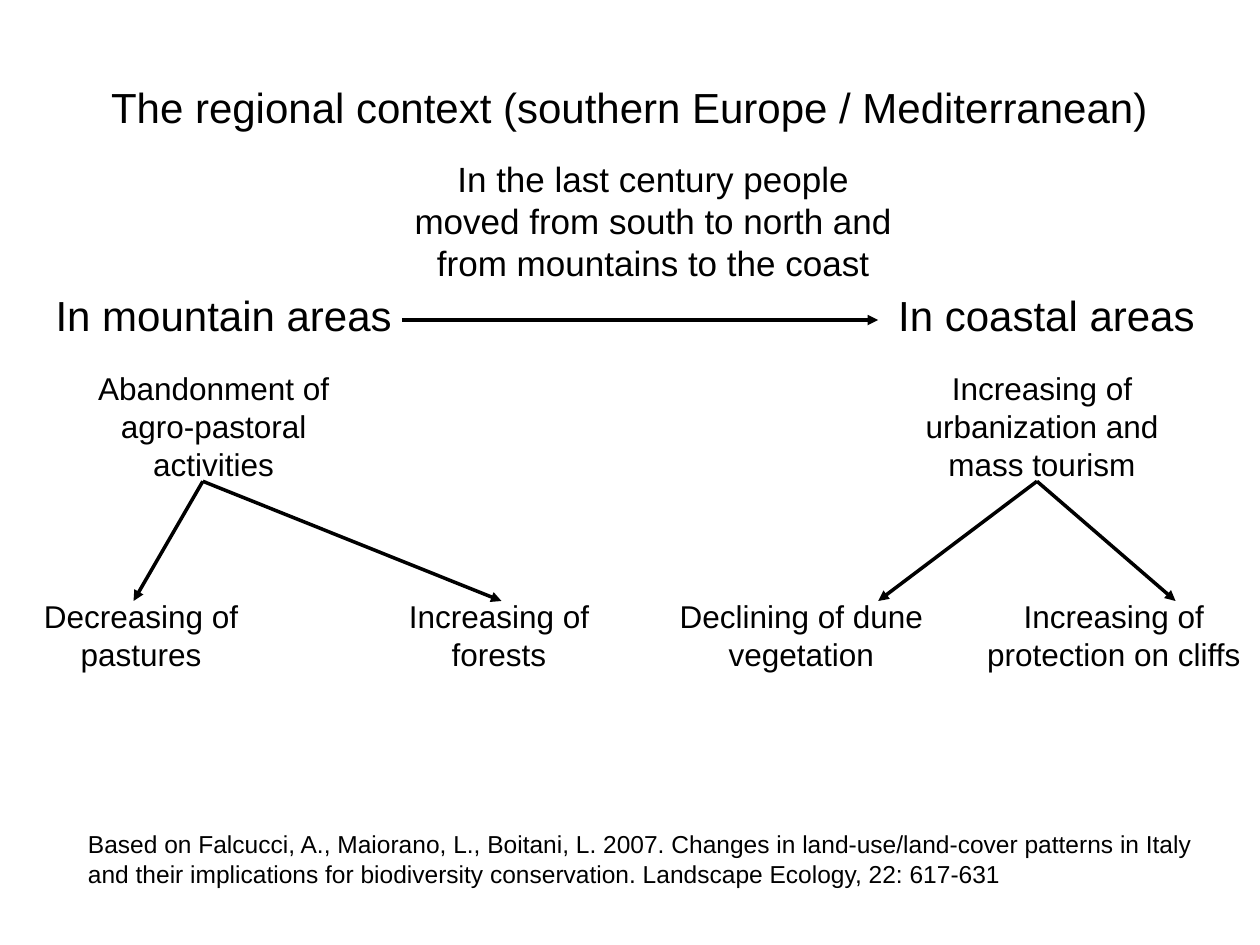
"""Build the slide on land-use change in southern Europe."""
from dataclasses import dataclass

from lxml import etree
from pptx import Presentation
from pptx import util as u
from pptx.dml.color import RGBColor
from pptx.enum import shapes, text
from pptx.oxml.ns import qn

BLACK = RGBColor(0, 0, 0)
FONT = "Arial"
COLUMNS, ROWS = 100, 75
COLUMN, ROW = u.Inches(10) // COLUMNS, u.Inches(7.5) // ROWS
HEADING_ROW, CAUSE_ROW, EFFECT_ROW = 22.5, 28.8, 46.9
FORK_ROW, TIP_ROW = 38.2, 47.7
EFFECT_WIDTH, EFFECT_HEIGHT = 22.4, 7.6


@dataclass(frozen=True)
class Effect:
    """Outcome label with the column its arrow points to."""
    label: str
    left: float
    tip: float


@dataclass(frozen=True)
class Area:
    """Region with its heading, cause and two effects."""
    heading: str
    heading_left: float
    cause: str
    cause_left: float
    cause_width: float
    fork: float
    effects: tuple[Effect, Effect]


AREAS = (
    Area("In mountain areas", 2, "Abandonment of agro-pastoral activities", 6.7, 20.5, 16.1,
         (Effect("Decreasing of pastures", 0, 10.6),
          Effect("Increasing of forests", 28.4, 39.8))),
    Area("In coastal areas", 67.3, "Increasing of urbanization and mass tourism", 69.7, 26, 82.3,
         (Effect("Declining of dune vegetation", 52.4, 69.7),
          Effect("Increasing of protection on cliffs", 77.2, 93.3))),
)


def grid(column: float, row: float) -> tuple[int, int]:
    """Convert grid columns and rows to slide lengths."""
    return round(column * COLUMN), round(row * ROW)


def write(slide, content: str, left: float, top: float, width: float, height: float, *,
          size: int = 18, align=text.PP_ALIGN.CENTER, anchor=text.MSO_ANCHOR.TOP,
          inset: float = 0.05, shape=None) -> None:
    """Write formatted text in a given placeholder or a new text box."""
    position, extent = grid(left, top), grid(width, height)
    shape = shape or slide.shapes.add_textbox(*position, *extent)
    shape.left, shape.top = position
    shape.width, shape.height = extent
    frame = shape.text_frame
    frame.word_wrap = True
    frame.auto_size = text.MSO_AUTO_SIZE.NONE
    frame.vertical_anchor = anchor
    frame.margin_top = frame.margin_bottom = u.Inches(inset)
    paragraph = frame.paragraphs[0]
    paragraph.alignment = align
    run = paragraph.add_run()
    run.text = content
    run.font.name, run.font.size = FONT, u.Pt(size)
    run.font.color.rgb = BLACK


def draw_arrow(slide, start: tuple[float, float], end: tuple[float, float]) -> None:
    """Draw a black arrow between two grid points."""
    arrow = slide.shapes.add_connector(shapes.MSO_CONNECTOR.STRAIGHT, *grid(*start), *grid(*end))
    arrow.line.color.rgb = BLACK
    arrow.line.width = u.Pt(2)
    properties = arrow.line._get_or_add_ln()
    etree.SubElement(properties, qn("a:tailEnd"), type="triangle")
    etree.SubElement(arrow._element.spPr, qn("a:effectLst"))


def draw_area(slide, area: Area) -> None:
    """Draw a region's heading, cause and effects."""
    write(slide, area.heading, area.heading_left, HEADING_ROW, 31.5, 5, size=24)
    write(slide, area.cause, area.cause_left, CAUSE_ROW, area.cause_width, 10)
    for effect in area.effects:
        draw_arrow(slide, (area.fork, FORK_ROW), (effect.tip, TIP_ROW))
        write(slide, effect.label, effect.left, EFFECT_ROW, EFFECT_WIDTH, EFFECT_HEIGHT)


def main() -> None:
    """Build and save the presentation."""
    presentation = Presentation()
    presentation.slide_width, presentation.slide_height = grid(COLUMNS, ROWS)
    slide = presentation.slides.add_slide(presentation.slide_layouts[5])
    write(slide, "The regional context (southern Europe / Mediterranean)",
          2.7, 6, 94.5, 5.7, size=24, shape=slide.shapes.title)
    write(slide, "In the last century people moved from south to north and "
          "from mountains to the coast", 31.3, 12, 41.1, 12.2, size=20)
    draw_arrow(slide, (31.9, 25.4), (69.7, 25.4))
    for area in AREAS:
        draw_area(slide, area)
    write(slide, "Based on Falcucci, A., Maiorano, L., Boitani, L. 2007. Changes in "
          "land-use/land-cover patterns in Italy and their implications for biodiversity "
          "conservation. Landscape Ecology, 22: 617-631", 6, 63.4, 92, 9.5, size=14,
          align=text.PP_ALIGN.LEFT, anchor=text.MSO_ANCHOR.MIDDLE, inset=0.1)
    presentation.save("out.pptx")


if __name__ == "__main__":
    main()
